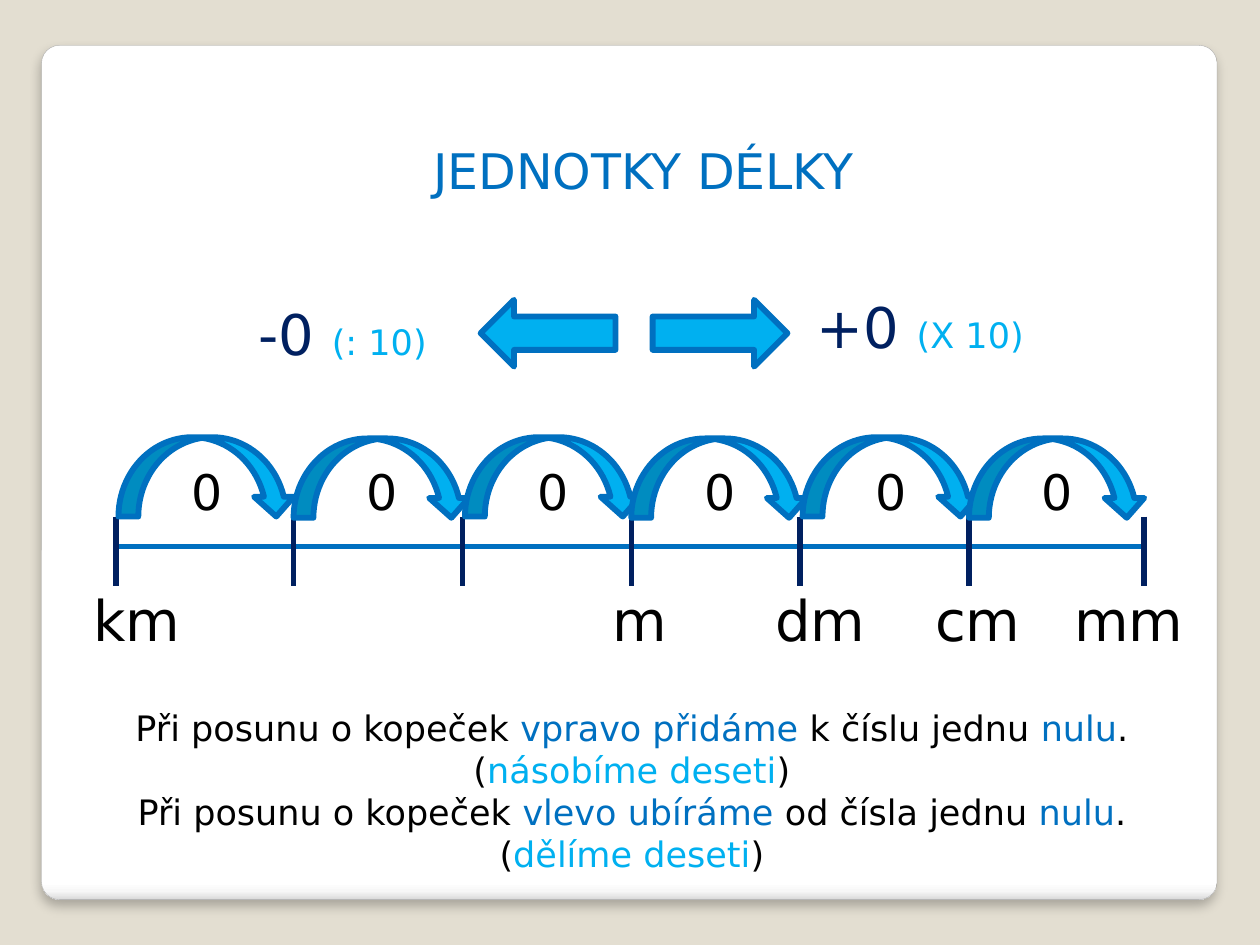
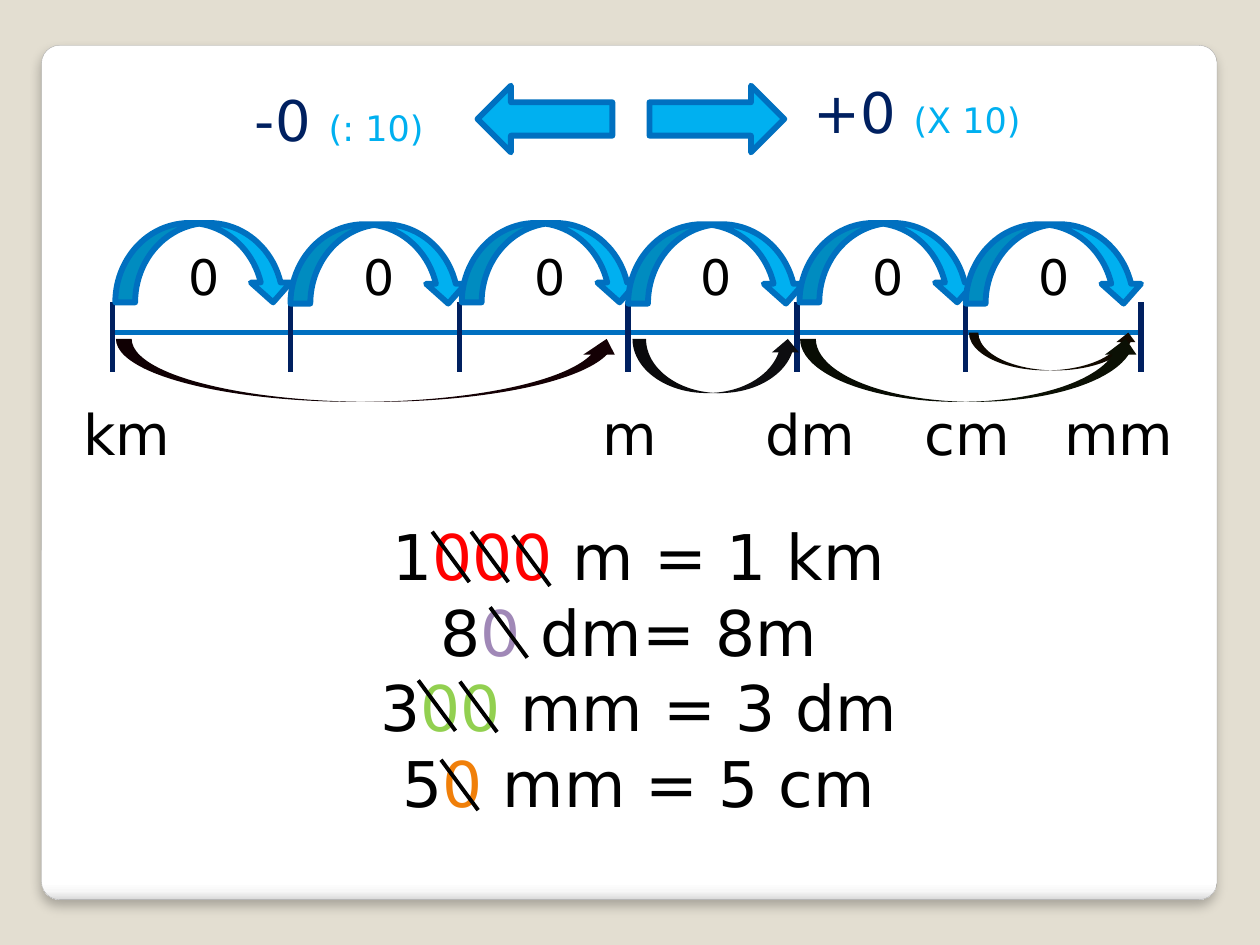
import pptx
import pptx.util
import pptx.dml.color
import pptx.enum.shapes
import pptx.enum.text
import pptx.oxml
import pptx.oxml.ns

RGBColor = pptx.dml.color.RGBColor
Shape = pptx.enum.shapes.MSO_SHAPE
Align = pptx.enum.text.PP_ALIGN

# Grid of square cells: 100 columns by 75 rows
CELL = pptx.util.Inches(0.1)
COLUMNS, ROWS = 100, 75

FONT = "DejaVu Sans"
BEIGE = RGBColor(0xE3, 0xDE, 0xD1)
CARD_EDGE = RGBColor(0xA4, 0xA4, 0xA4)
BLACK = RGBColor(0x00, 0x00, 0x00)
BLUE = RGBColor(0x00, 0x70, 0xC0)
SKY = RGBColor(0x00, 0xB0, 0xF0)
NAVY = RGBColor(0x00, 0x20, 0x60)
RED = RGBColor(0xFF, 0x00, 0x00)
PURPLE = RGBColor(0xA0, 0x88, 0xB7)
GREEN = RGBColor(0x92, 0xD0, 0x50)
ORANGE = RGBColor(0xF0, 0x7F, 0x09)
DARK_RED = RGBColor(0x14, 0x00, 0x04)
DARK_GREEN = RGBColor(0x0B, 0x10, 0x04)
DARK_PURPLE = RGBColor(0x0D, 0x0D, 0x10)
DARK_ORANGE = RGBColor(0x12, 0x0A, 0x00)

# Scale: tick positions in columns, everything else relative to the first tick
TICKS = [0] + [14.1 + 13.4 * step for step in range(5)] + [81.6]
UNIT_LABELS = ["km", "m", "dm", "cm", "mm"]
LABEL_CENTRES = [43.4, 57.7, 70.2, 82.2]

CARD_GRADIENT = [(0, "FFFFFF"), (98, "FFFFFF"), (99, "F7F7F7"), (100, "DADADA")]


def cells(*counts):
    return [round(count * CELL) for count in counts]


def add_xml(parent, body):
    """Append one drawing element, given as XML with the a: prefix."""
    tag_end = min(body.index(mark) for mark in " />" if mark in body)
    namespace = pptx.oxml.ns.nsdecls("a")
    element = pptx.oxml.parse_xml(f"{body[:tag_end]} {namespace}{body[tag_end:]}")
    parent.append(element)
    return element


def add_line(slide, start, end, color, width):
    line = slide.shapes.add_connector(
        pptx.enum.shapes.MSO_CONNECTOR.STRAIGHT, *cells(*start, *end))
    line.line.color.rgb = color
    line.line.width = pptx.util.Pt(width)
    add_xml(line._element.spPr, "<a:effectLst/>")


def add_figure(slide, kind, box, fill, outline=None):
    shape = slide.shapes.add_shape(kind, *cells(*box))
    shape.shadow.inherit = False
    shape.fill.solid()
    shape.fill.fore_color.rgb = fill
    if outline is None:
        shape.line.fill.background()
    else:
        shape.line.color.rgb = outline
        shape.line.width = pptx.util.Pt(3.35)
    return shape


def add_text(slide, box, paragraphs, size, align=Align.LEFT, wrap=False):
    """Each paragraph is a list of (text, color) runs or (text, color, size)."""
    text_box = slide.shapes.add_textbox(*cells(*box))
    frame = text_box.text_frame
    frame.word_wrap = wrap
    frame.auto_size = pptx.enum.text.MSO_AUTO_SIZE.SHAPE_TO_FIT_TEXT
    for index, runs in enumerate(paragraphs):
        paragraph = frame.add_paragraph() if index else frame.paragraphs[0]
        paragraph.alignment = align
        paragraph.font.name = FONT
        paragraph.font.size = pptx.util.Pt(size)
        for text, color, *own_size in runs:
            run = paragraph.add_run()
            run.text = text
            run.font.color.rgb = color
            if own_size:
                run.font.size = pptx.util.Pt(own_size[0])
    return frame


def add_card(slide):
    card = add_figure(slide, Shape.ROUNDED_RECTANGLE, (3.3, 3.6, 93.3, 67.8), BEIGE, CARD_EDGE)
    card.adjustments[0] = 0.021
    card.line.width = pptx.util.Pt(0.16)
    # Four gradient stops and a soft shadow below
    card.fill.gradient()
    card.fill.gradient_angle = 270
    stops = card.fill.gradient_stops._gsLst
    for stop in list(stops):
        stops.remove(stop)
    for position, color in CARD_GRADIENT:
        add_xml(stops, f'<a:gs pos="{position * 1000}"><a:srgbClr val="{color}"/></a:gs>')
    effects = card._element.spPr.find(pptx.oxml.ns.qn("a:effectLst"))
    add_xml(effects, '<a:outerShdw blurRad="76200" dist="50800" dir="5400000" algn="t" '
                     'rotWithShape="0"><a:srgbClr val="000000"><a:alpha val="25000"/>'
                     '</a:srgbClr></a:outerShdw>')


def add_scale(slide, left, top):
    """Number line with a hop and a zero over every interval."""
    add_line(slide, (left, top + 2.4), (left + TICKS[-1], top + 2.4), BLUE, 3)
    for tick in TICKS:
        add_line(slide, (left + tick, top), (left + tick, top + 5.5), NAVY, 3)
    hops = [(left + tick + (0 if index % 2 else 0.2), top - 6.3 + 0.1 * (index % 2))
            for index, tick in enumerate(TICKS[:-1])]
    for hop_left, hop_top in hops:
        add_figure(slide, Shape.CURVED_DOWN_ARROW, (hop_left, hop_top, 14.1, 6.3), SKY, BLUE)
    for hop_left, hop_top in hops:
        add_text(slide, (hop_left + 4.8, top - 4.9, 4.5, 5.7), [[("0", BLACK)]], 28)


def add_directions(slide, left, top):
    """Arrows for dividing and multiplying, with their captions."""
    for kind, offset in ((Shape.RIGHT_ARROW, 42.6), (Shape.LEFT_ARROW, 28.95)):
        add_figure(slide, kind, (left + offset, top, 10.7, 5.3), SKY, BLUE)
    for sign, rule, offset, rise, width in (("+0 ", "(X 10)", 54.6, 1.1, 19.6),
                                            ("-0 ", "(: 10)", 10.3, 0.5, 16.9)):
        add_text(slide, (left + offset, top - rise, width, 6.4),
                 [[(sign, NAVY), (rule, SKY, 20)]], 32)


def add_unit_labels(slide, left, top):
    frame = add_text(slide, (left, top, 91.3, 6.4),
                     [[("\t".join(UNIT_LABELS), BLACK)]], 32, wrap=True)
    frame.margin_left = cells(2.4)[0]
    tabs = "".join(f'<a:tab pos="{position}" algn="ctr"/>' for position in cells(*LABEL_CENTRES))
    properties = frame.paragraphs[0]._p.get_or_add_pPr()
    properties.insert(0, add_xml(properties, f"<a:tabLst>{tabs}</a:tabLst>"))


def add_unit_scale(slide, left, top, label_left, label_top):
    add_card(slide)
    add_scale(slide, left, top)
    add_unit_labels(slide, label_left, label_top)
    add_directions(slide, left, top - 17.2)


def add_rule_slide(presentation):
    slide = presentation.slides.add_slide(presentation.slide_layouts[6])
    add_unit_scale(slide, 9.2, 41, 5, 46)
    add_text(slide, (32.5, 10.7, 37.1, 5.7), [[("JEDNOTKY DÉLKY", BLUE)]], 28, Align.CENTER)
    rules = []
    for move, joint, operation in (("vpravo přidáme", " k číslu jednu ", "násobíme deseti"),
                                   ("vlevo ubíráme ", "od čísla jednu ", "dělíme deseti")):
        rules.append([("Při posunu o kopeček ", BLACK), (move, BLUE), (joint, BLACK),
                      ("nulu", BLUE), (".", BLACK)])
        rules.append([("(", BLACK), (operation, SKY), (")", BLACK)])
    add_text(slide, (5.4, 55.6, 89.5, 14.5), rules, 20, Align.CENTER, wrap=True)


def add_example_slide(presentation):
    slide = presentation.slides.add_slide(presentation.slide_layouts[6])
    add_unit_scale(slide, 8.95, 24, 4.2, 31.2)

    # Conversions with the removed zeros in colour
    examples = [("1", "000", RED, " m = 1 km"), ("8", "0", PURPLE, " dm= 8m "),
                ("3", "00", GREEN, " mm = 3 dm"), ("5", "0", ORANGE, " mm = 5 cm")]
    add_text(slide, (5.9, 40.6, 89.6, 25.2),
             [[(digit, BLACK), (zeros, color), (rest, BLACK)]
              for digit, zeros, color, rest in examples], 36, Align.CENTER, wrap=True)

    # Jumps back to the larger unit
    for box, color in (((76.9, 26.4, 13.4, 3), DARK_ORANGE), ((63.5, 26.9, 27.1, 5), DARK_GREEN),
                       ((9.2, 26.9, 40.2, 5), DARK_RED), ((50.2, 26.9, 13.4, 4.3), DARK_PURPLE)):
        add_figure(slide, Shape.CURVED_UP_ARROW, box, color)

    # Strokes through the removed zeros
    for left, top in ((34.3, 42.2), (37.4, 42.2), (40.7, 42.5), (38.9, 48.2),
                      (33.2, 54), (36.5, 54.1), (35, 60.3)):
        add_line(slide, (left, top), (left + 2.95, top + 4), BLACK, 2.25)


def main():
    presentation = pptx.Presentation()
    presentation.slide_width, presentation.slide_height = cells(COLUMNS, ROWS)
    background = presentation.slide_master.background.fill
    background.solid()
    background.fore_color.rgb = BEIGE
    add_rule_slide(presentation)
    add_example_slide(presentation)
    presentation.save("out.pptx")


if __name__ == "__main__":
    main()
